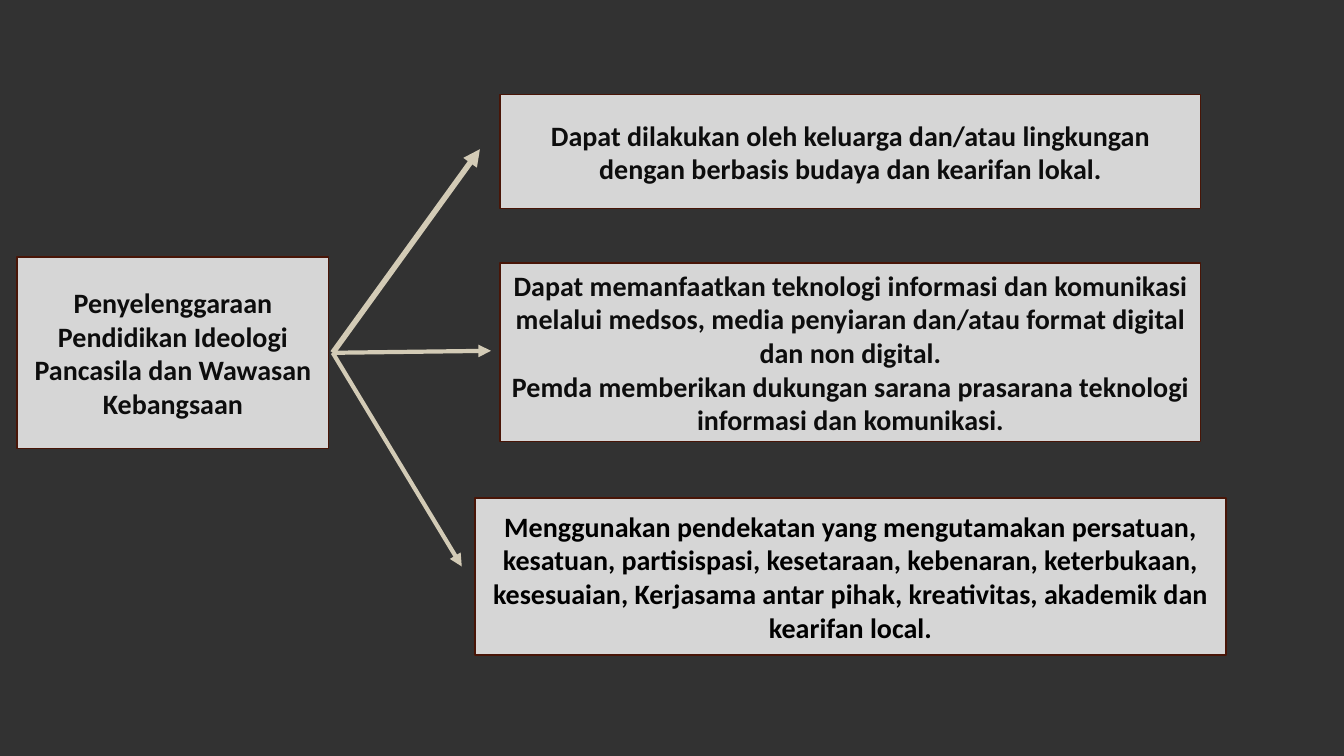
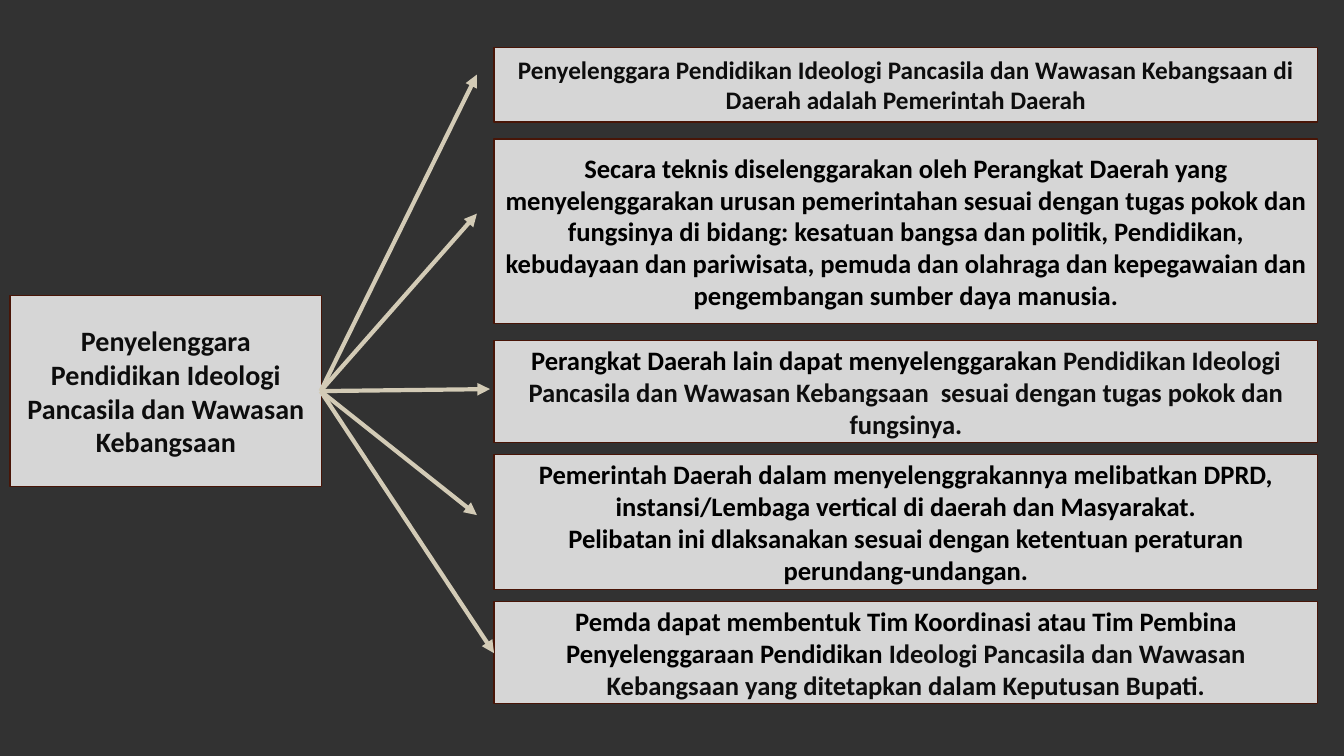
import pptx
import pptx.util
import pptx.dml.color
import pptx.enum.shapes
import pptx.enum.text
import pptx.oxml
import pptx.oxml.ns
from lxml import etree

Inches = pptx.util.Inches
Pt = pptx.util.Pt
RGBColor = pptx.dml.color.RGBColor

BACKGROUND = RGBColor(0x32, 0x32, 0x32)
PANEL = RGBColor(0xD6, 0xD6, 0xD6)
BORDER = RGBColor(0x48, 0x15, 0x07)
ARROW = RGBColor(0xD3, 0xCB, 0xB6)
INK = RGBColor(0x0D, 0x0D, 0x0D)
BLACK = RGBColor(0x00, 0x00, 0x00)

FONT = "Calibri"
TOPIC_SIZE = (3.09, 1.9)
TOPIC_POINTS = 20

# Each slide has one topic and its branches.
# "box" is left, top, width, height; "tip" is where the arrow ends, in inches.
# A paragraph is a list of (text, colour) runs.
DIAGRAMS = [
    {
        "topic": "Penyelenggaraan Pendidikan Ideologi Pancasila dan Wawasan Kebangsaan",
        "corner": (0.17, 2.55),
        "arrow_start": (3.3, 3.5),
        "branches": [
            {"box": (4.96, 0.94, 6.95, 1.13), "points": 20, "tip": (4.76, 1.48), "weight": 4,
             "paragraphs": [[("Dapat dilakukan oleh keluarga dan/atau lingkungan dengan berbasis "
                              "budaya dan kearifan lokal.", INK)]]},
            {"box": (4.96, 2.61, 6.95, 1.77), "points": 20, "tip": (4.87, 3.48),
             "paragraphs": [[("Dapat memanfaatkan teknologi informasi dan komunikasi melalui medsos, "
                              "media penyiaran dan/atau format digital dan non digital.", INK)],
                            [("Pemda memberikan dukungan sarana prasarana teknologi informasi dan "
                              "komunikasi.", INK)]]},
            {"box": (4.71, 4.94, 7.45, 1.56), "points": 20, "tip": (4.58, 5.62),
             "paragraphs": [[("Menggunakan pendekatan yang mengutamakan persatuan, kesatuan, "
                              "partisispasi, kesetaraan, kebenaran, keterbukaan, kesesuaian, "
                              "Kerjasama antar pihak, kreativitas, akademik dan kearifan local.",
                              BLACK)]]},
        ],
    },
    {
        "topic": "Penyelenggara Pendidikan Ideologi Pancasila dan Wawasan Kebangsaan",
        "corner": (0.1, 2.93),
        "arrow_start": (3.18, 3.88),
        "branches": [
            {"box": (4.9, 0.47, 8.17, 0.74), "points": 18, "tip": (4.73, 0.74),
             "paragraphs": [[("Penyelenggara Pendidikan Ideologi Pancasila dan Wawasan Kebangsaan di "
                              "Daerah adalah Pemerintah Daerah", INK)]]},
            {"box": (4.9, 1.38, 8.17, 1.83), "points": 19, "tip": (4.73, 2.12),
             "paragraphs": [[("Secara teknis diselenggarakan oleh Perangkat Daerah yang "
                              "menyelenggarakan urusan pemerintahan sesuai dengan tugas pokok dan "
                              "fungsinya di bidang: kesatuan bangsa dan politik, Pendidikan, "
                              "kebudayaan dan pariwisata, pemuda dan olahraga dan kepegawaian dan "
                              "pengembangan sumber daya manusia.", BLACK)]]},
            {"box": (4.9, 3.38, 8.17, 1.01), "points": 19, "tip": (4.86, 3.86),
             "paragraphs": [[("Perangkat Daerah lain dapat menyelenggarakan ", BLACK),
                             ("Pendidikan Ideologi Pancasila dan Wawasan Kebangsaan  sesuai dengan "
                              "tugas pokok dan fungsinya.", INK)]]},
            {"box": (4.9, 4.51, 8.17, 1.34), "points": 19, "tip": (4.73, 5.11),
             "paragraphs": [[("Pemerintah Daerah dalam menyelenggrakannya melibatkan DPRD, "
                              "instansi/Lembaga vertical di daerah dan Masyarakat.", BLACK)],
                            [("Pelibatan ini dlaksanakan sesuai dengan ketentuan peraturan "
                              "perundang-undangan.", BLACK)]]},
            {"box": (4.9, 5.97, 8.17, 1.01), "points": 19, "tip": (4.9, 6.48),
             "paragraphs": [[("Pemda dapat membentuk Tim Koordinasi atau Tim Pembina "
                              "Penyelenggaraan Pendidikan ", BLACK),
                             ("Ideologi Pancasila dan Wawasan Kebangsaan yang ditetapkan dalam "
                              "Keputusan Bupati.", INK)]]},
        ],
    },
]


def add_panel(slide, box, paragraphs, points):
    shape = slide.shapes.add_shape(
        pptx.enum.shapes.MSO_SHAPE.RECTANGLE, *[Inches(length) for length in box])
    shape.shadow.inherit = False
    shape.fill.solid()
    shape.fill.fore_color.rgb = PANEL
    shape.line.color.rgb = BORDER
    shape.line.width = Pt(1)
    frame = shape.text_frame
    frame.word_wrap = True
    frame.vertical_anchor = pptx.enum.text.MSO_ANCHOR.MIDDLE
    for index, runs in enumerate(paragraphs):
        paragraph = frame.add_paragraph() if index else frame.paragraphs[0]
        paragraph.alignment = pptx.enum.text.PP_ALIGN.CENTER
        for text, colour in runs:
            run = paragraph.add_run()
            run.text = text
            run.font.name = FONT
            run.font.size = Pt(points)
            run.font.bold = True
            run.font.color.rgb = colour


def add_arrow(slide, start, tip, weight):
    connector = slide.shapes.add_connector(
        pptx.enum.shapes.MSO_CONNECTOR.STRAIGHT,
        *[Inches(length) for length in start + tip])
    connector.line.color.rgb = ARROW
    connector.line.width = Pt(weight)
    properties = connector.element.spPr
    outline = properties.find(pptx.oxml.ns.qn("a:ln"))
    etree.SubElement(outline, pptx.oxml.ns.qn("a:tailEnd"), type="triangle")
    etree.SubElement(properties, pptx.oxml.ns.qn("a:effectLst"))


def add_diagram(presentation, diagram):
    slide = presentation.slides.add_slide(presentation.slide_layouts[6])
    add_panel(slide, diagram["corner"] + TOPIC_SIZE, [[(diagram["topic"], INK)]], TOPIC_POINTS)
    for branch in diagram["branches"]:
        add_panel(slide, branch["box"], branch["paragraphs"], branch["points"])
    for branch in diagram["branches"]:
        add_arrow(slide, diagram["arrow_start"], branch["tip"], branch.get("weight", 3))


def main():
    presentation = pptx.Presentation()
    presentation.slide_width = Inches(13.33)
    presentation.slide_height = Inches(7.5)
    background = presentation.slide_master.background.fill
    background.solid()
    background.fore_color.rgb = BACKGROUND
    for diagram in DIAGRAMS:
        add_diagram(presentation, diagram)
    presentation.save("out.pptx")


if __name__ == "__main__":
    main()
